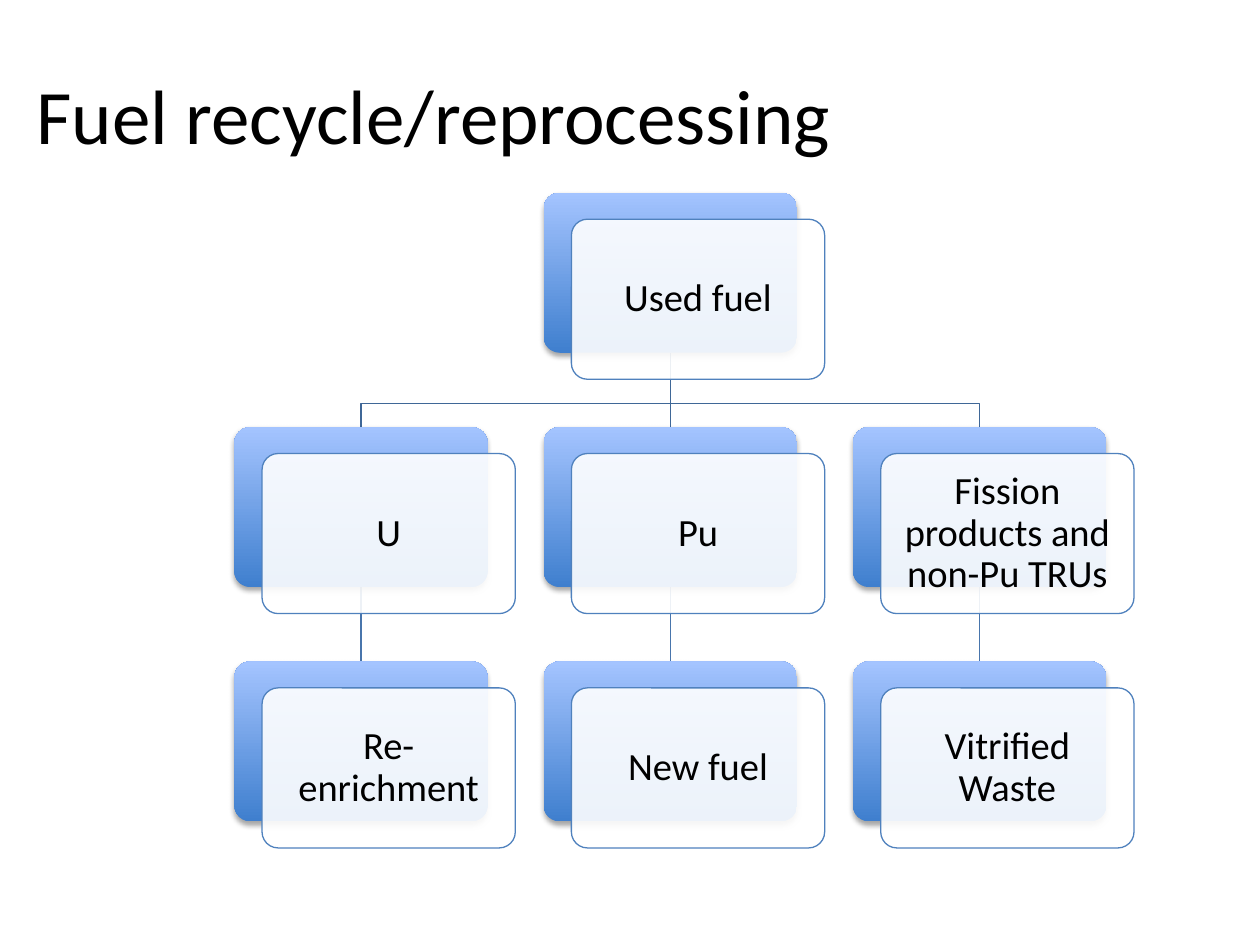
from dataclasses import dataclass

from lxml.etree import SubElement
from pptx import Presentation
from pptx.dml.color import RGBColor
from pptx.enum.shapes import MSO_CONNECTOR, MSO_SHAPE
from pptx.enum.text import MSO_ANCHOR, PP_ALIGN
from pptx.oxml.ns import qn
from pptx.util import Inches, Pt


@dataclass(frozen=True)
class Theme:
    font: str = "Calibri"
    title_size: int = 44
    card_size: int = 22
    line_width: float = 0.75
    text: str = "000000"
    card: str = "FFFFFF"
    card_opacity: int = 90
    card_line: str = "4F81BD"
    gradient: tuple = ("3F7FCE", "A4C4FF")
    branch_line: str = "3F6797"
    step_line: str = "4875AC"
    shadow: str = "000000"
    shadow_opacity: int = 35


CARD_WIDTH, CARD_HEIGHT = 2.01, 1.27
OFFSET_X, OFFSET_Y = 0.22, 0.21
COLUMNS = [1.86 + 2.455 * index for index in range(3)]
ROWS = [1.53 + 1.86 * index for index in range(3)]
BRANCH_Y = 3.2
CARDS = {
    (0, 1): "Used fuel",
    (1, 0): "U",
    (2, 0): "Re-enrichment",
    (1, 1): "Pu",
    (2, 1): "New fuel",
    (1, 2): "Fission products and non-Pu TRUs",
    (2, 2): "Vitrified Waste",
}
STEPS = [
    ((1, 2), (2, 2)),
    ((1, 1), (2, 1)),
    ((0, 1), (1, 1)),
    ((1, 0), (2, 0)),
]


def center_x(column):
    return COLUMNS[column] + CARD_WIDTH / 2


class SlideBuilder:
    def __init__(self, slide, theme):
        self.slide = slide
        self.theme = theme

    def format_text(self, paragraph, size, alignment):
        paragraph.alignment = alignment
        paragraph.font.name = self.theme.font
        paragraph.font.size = Pt(size)
        paragraph.font.color.rgb = RGBColor.from_string(self.theme.text)

    def format_line(self, line, color):
        line.color.rgb = RGBColor.from_string(color)
        line.width = Pt(self.theme.line_width)

    def title(self, text, left, top, width, height):
        title = self.slide.shapes.title
        title.left, title.top = Inches(left), Inches(top)
        title.width, title.height = Inches(width), Inches(height)
        title.text_frame.text = text
        title.text_frame.vertical_anchor = MSO_ANCHOR.MIDDLE
        self.format_text(title.text_frame.paragraphs[0], self.theme.title_size, PP_ALIGN.LEFT)

    def branch(self, points):
        start, *rest = [(Inches(x), Inches(y)) for x, y in points]
        builder = self.slide.shapes.build_freeform(*start)
        builder.add_line_segments(rest, close=False)
        shape = builder.convert_to_shape()
        shape.fill.background()
        shape.shadow.inherit = False
        self.format_line(shape.line, self.theme.branch_line)

    def connector(self, x, top, bottom, color):
        connector = self.slide.shapes.add_connector(
            MSO_CONNECTOR.STRAIGHT, Inches(x), Inches(top), Inches(x), Inches(bottom)
        )
        self.format_line(connector.line, color)
        SubElement(connector._element.spPr, qn("a:effectLst"))
        return connector

    def rounded(self, left, top):
        shape = self.slide.shapes.add_shape(
            MSO_SHAPE.ROUNDED_RECTANGLE,
            Inches(left), Inches(top), Inches(CARD_WIDTH), Inches(CARD_HEIGHT),
        )
        shape.adjustments[0] = 0.1
        shape.shadow.inherit = False
        return shape

    def backing(self, left, top):
        shape = self.rounded(left, top)
        shape.line.fill.background()
        shape.fill.gradient()
        shape.fill.gradient_angle = 90
        for stop, color in zip(shape.fill.gradient_stops, self.theme.gradient):
            stop.color.rgb = RGBColor.from_string(color)
        effects = shape._element.spPr.find(qn("a:effectLst"))
        shadow = SubElement(
            effects, qn("a:outerShdw"),
            blurRad=str(Pt(3.1)), dist=str(Pt(1.8)), dir="5400000", rotWithShape="0",
        )
        color = SubElement(shadow, qn("a:srgbClr"), val=self.theme.shadow)
        SubElement(color, qn("a:alpha"), val=str(self.theme.shadow_opacity * 1000))
        return shape

    def label(self, text, left, top):
        shape = self.rounded(left, top)
        shape.fill.solid()
        shape.fill.fore_color.rgb = RGBColor.from_string(self.theme.card)
        color = shape._element.spPr.find(qn("a:solidFill"))[0]
        SubElement(color, qn("a:alpha"), val=str(self.theme.card_opacity * 1000))
        self.format_line(shape.line, self.theme.card_line)
        frame = shape.text_frame
        frame.text = text
        frame.word_wrap = True
        frame.vertical_anchor = MSO_ANCHOR.MIDDLE
        frame.margin_left = frame.margin_right = Inches(0.09)
        frame.margin_top = frame.margin_bottom = Inches(0.09)
        paragraph = frame.paragraphs[0]
        paragraph.line_spacing = 0.9
        self.format_text(paragraph, self.theme.card_size, PP_ALIGN.CENTER)

    def card(self, text, left, top):
        backing = self.backing(left, top)
        self.label(text, left + OFFSET_X, top + OFFSET_Y)
        return backing


def main():
    presentation = Presentation()
    presentation.slide_width, presentation.slide_height = Inches(10), Inches(7.5)
    slide = presentation.slides.add_slide(presentation.slide_layouts[5])
    theme = Theme()
    builder = SlideBuilder(slide, theme)
    builder.title("Fuel recycle/reprocessing", 0.19, 0.28, 9, 1.25)

    for column in (2, 0):
        builder.branch([
            (center_x(1), ROWS[0] + CARD_HEIGHT),
            (center_x(1), BRANCH_Y),
            (center_x(column), BRANCH_Y),
            (center_x(column), ROWS[1]),
        ])

    connectors = []
    for (row, column), (next_row, _) in STEPS:
        color = theme.step_line if row else theme.branch_line
        connectors.append(builder.connector(
            center_x(column), ROWS[row] + CARD_HEIGHT, ROWS[next_row], color
        ))

    cards = {
        (row, column): builder.card(text, COLUMNS[column], ROWS[row])
        for (row, column), text in CARDS.items()
    }
    for connector, (parent, child) in zip(connectors, STEPS):
        connector.begin_connect(cards[parent], 2)
        connector.end_connect(cards[child], 0)

    presentation.save("out.pptx")


if __name__ == "__main__":
    main()
